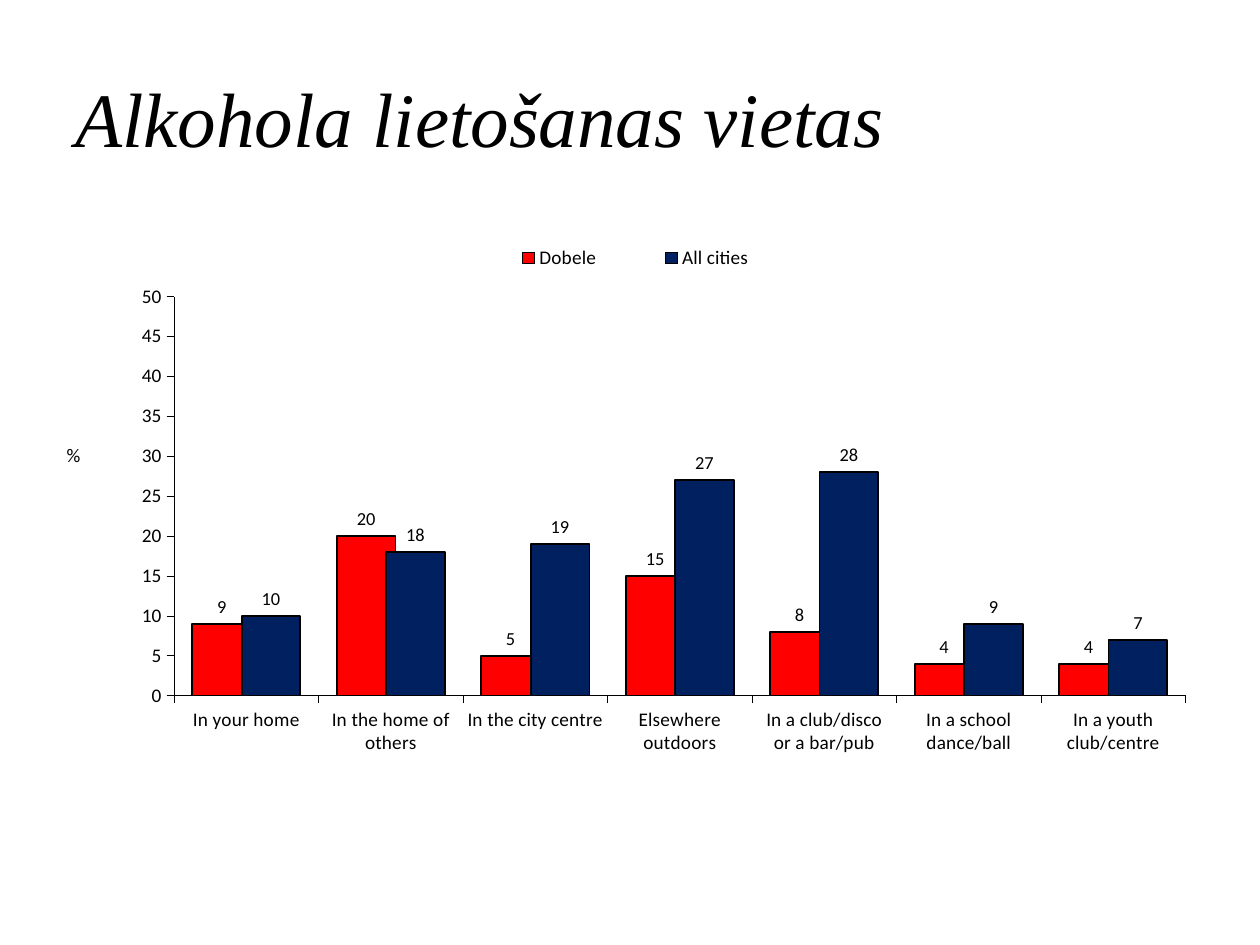
from lxml import etree
from pptx import Presentation
from pptx import util as u
from pptx.chart.data import CategoryChartData
from pptx.dml.color import RGBColor
from pptx.enum import chart as ch, text
from pptx.oxml.ns import qn

COLORS = {"ink": "000000", "Dobele": "FF0000", "All cities": "002060"}
PLACES = ["In your home", "In the home of others", "In the city centre",
          "Elsewhere outdoors", "In a club/disco or a bar/pub",
          "In a school dance/ball", "In a youth club/centre"]
SHARES = {"Dobele": (9, 20, 5, 15, 8, 4, 4),
          "All cities": (10, 18, 19, 27, 28, 9, 7)}


def color(name):
    """Return the named palette colour."""
    return RGBColor.from_string(COLORS[name])


def style_font(font, size, face="Calibri", italic=False):
    """Apply size, face, slant and ink colour to a font."""
    font.size, font.name = u.Pt(size), face
    font.bold, font.italic = False, italic
    font.color.rgb = color("ink")


def add_text(slide, wording, box, **style):
    """Add a left-aligned, vertically centred text box."""
    frame = slide.shapes.add_textbox(*map(u.Inches, box)).text_frame
    frame.word_wrap = True
    frame.vertical_anchor = text.MSO_ANCHOR.MIDDLE
    paragraph = frame.paragraphs[0]
    paragraph.alignment = text.PP_ALIGN.LEFT
    run = paragraph.add_run()
    run.text = wording
    style_font(run.font, **style)


def place_part(part, index, inner=False, **fractions):
    """Give a chart part a manual layout in fractions of the chart."""
    for old in part.findall(qn("c:layout")):
        part.remove(old)
    layout = etree.Element(qn("c:layout"))
    manual = etree.SubElement(layout, qn("c:manualLayout"))
    settings = {"layoutTarget": "inner"} if inner else {}
    settings.update({f"{axis}Mode": "edge" for axis in "xy"})
    settings.update(fractions)
    for tag, value in settings.items():
        etree.SubElement(manual, qn(f"c:{tag}")).set("val", str(value))
    part.insert(index, layout)


def style_axis(axis):
    """Draw a thin axis with outward ticks and no gridlines."""
    axis.has_major_gridlines = False
    axis.major_tick_mark = ch.XL_TICK_MARK.OUTSIDE
    axis.minor_tick_mark = ch.XL_TICK_MARK.NONE
    axis.format.line.color.rgb = color("ink")
    axis.format.line.width = u.Pt(0.25)
    style_font(axis.tick_labels.font, 11)


def style_series(series):
    """Colour one city's columns and show whole-number labels above."""
    series.format.fill.solid()
    series.format.fill.fore_color.rgb = color(series.name)
    series.format.line.color.rgb = color("ink")
    series.format.line.width = u.Pt(1)
    series.invert_if_negative = False
    labels = series.data_labels
    labels.show_value = True
    labels.position = ch.XL_LABEL_POSITION.OUTSIDE_END
    labels.number_format, labels.number_format_is_linked = "0", False
    style_font(labels.font, 10.5)


def add_percent_axis(axis):
    """Scale the value axis and set its upright percent title."""
    style_axis(axis)
    axis.minimum_scale, axis.maximum_scale, axis.major_unit = 0, 50, 5
    axis.tick_labels.number_format = "0"
    axis.tick_labels.number_format_is_linked = False
    frame = axis.axis_title.text_frame
    frame.text = "%"
    style_font(frame.paragraphs[0].runs[0].font, 11)


def add_places_chart(slide, box):
    """Add the column chart comparing drinking places."""
    data = CategoryChartData(number_format="0")
    data.categories = PLACES
    for city, shares in SHARES.items():
        data.add_series(city, shares)
    chart = slide.shapes.add_chart(
        ch.XL_CHART_TYPE.COLUMN_CLUSTERED, *map(u.Inches, box), data).chart
    chart.has_title = False
    style_font(chart.font, 11)

    plot = chart.plots[0]
    plot.gap_width, plot.overlap, plot.vary_by_categories = 62, 16, False
    for series in plot.series:
        style_series(series)
    style_axis(chart.category_axis)
    add_percent_axis(chart.value_axis)

    chart.has_legend = True
    chart.legend.position = ch.XL_LEGEND_POSITION.RIGHT
    chart.legend.include_in_layout = False
    style_font(chart.legend.font, 11)

    root = chart._chartSpace
    axis_title = root.find(f".//{qn('c:valAx')}/{qn('c:title')}")
    axis_title.find(f".//{qn('a:bodyPr')}").set("rot", "0")
    place_part(axis_title, 1, x=0, y=0.35)
    place_part(root.find(f".//{qn('c:legend')}"), 1, x=0.35, y=0.03, w=0.31, h=0.06)
    place_part(root.find(f".//{qn('c:plotArea')}"), 0, inner=True,
               x=0.098, y=0.122, w=0.892, h=0.64)


def main():
    """Build and save the slide."""
    deck = Presentation()
    deck.slide_width, deck.slide_height = u.Inches(10), u.Inches(7.5)
    slide = deck.slides.add_slide(deck.slide_layouts[6])
    add_text(slide, "Alkohola lietošanas vietas", (0.5, 0.3, 9, 1.25),
             size=44, face="Times New Roman", italic=True)
    add_places_chart(slide, (0.5, 1.75, 9, 4.95))
    deck.save("out.pptx")


if __name__ == "__main__":
    main()
